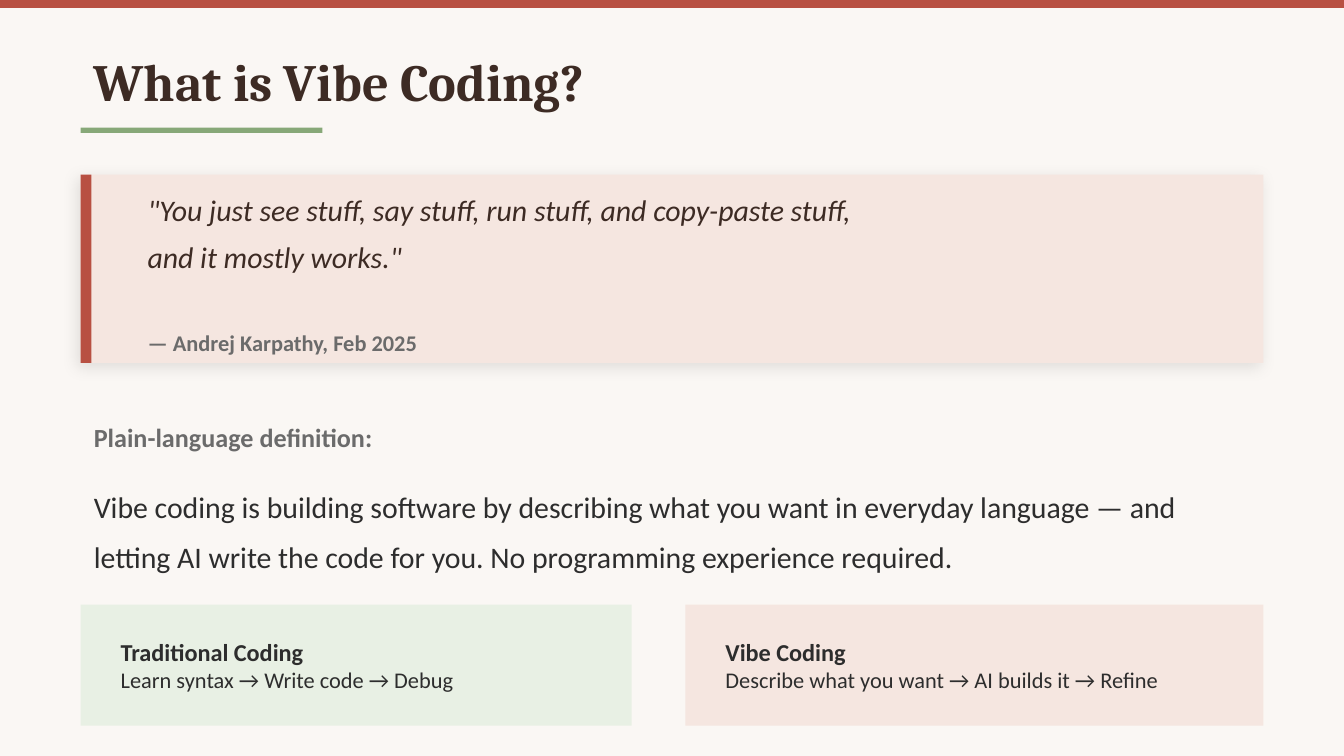
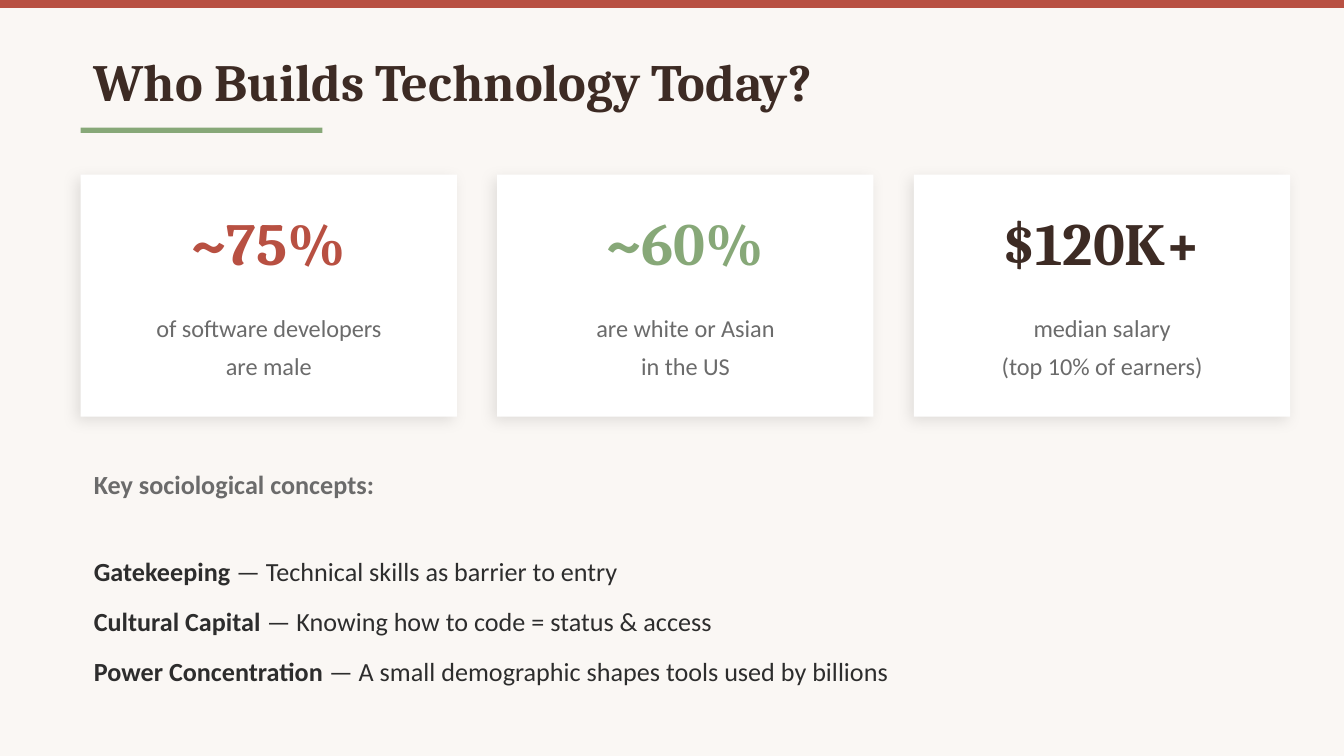
from dataclasses import dataclass

from lxml.etree import SubElement
from pptx import Presentation
from pptx.dml.color import RGBColor as RGB
from pptx.enum.shapes import MSO_SHAPE as Shape
from pptx.enum.text import MSO_ANCHOR as Anchor, PP_ALIGN as Align
from pptx.oxml.ns import qn
from pptx.slide import Slide
from pptx.util import Inches, Pt

CREAM = RGB(0xFA, 0xF7, 0xF4)
RUST = RGB(0xB8, 0x50, 0x42)
BROWN = RGB(0x3D, 0x2B, 0x24)
SAGE = RGB(0x87, 0xA8, 0x78)
BLUSH = RGB(0xF5, 0xE6, 0xE0)
MINT = RGB(0xE8, 0xF0, 0xE4)
WHITE = RGB(0xFF, 0xFF, 0xFF)
GRAY = RGB(0x6B, 0x6B, 0x6B)
INK = RGB(0x2D, 0x2D, 0x2D)

HEAD = "Cambria"
BODY = "Calibri"
LEFT = 0.6
WIDE = 8.8
TOP = 1.3


@dataclass(frozen=True)
class Box:
    left: float
    top: float
    width: float
    height: float

    def lengths(self) -> list[Inches]:
        return [Inches(n) for n in (self.left, self.top, self.width, self.height)]


@dataclass(frozen=True)
class Style:
    size: int
    color: RGB
    font: str = BODY
    bold: bool = False
    italic: bool = False
    align: Align = Align.LEFT
    spacing: float | None = None


@dataclass(frozen=True)
class Line:
    text: str
    style: Style
    lead: str = ""
    gap: int = 0


@dataclass(frozen=True)
class Panel:
    left: float
    width: float
    fill: RGB
    name: str
    steps: str


@dataclass(frozen=True)
class Stat:
    value: str
    color: RGB
    labels: tuple[str, str]


TITLE = Style(28, BROWN, HEAD, bold=True)
LABEL = Style(14, GRAY, bold=True)
QUOTE = Style(16, BROWN, italic=True, spacing=1.3)
SOURCE = Style(12, GRAY, bold=True, spacing=1.3)
PROSE = Style(16, INK, spacing=1.4)
NAME = Style(13, INK, bold=True)
STEPS = Style(12, INK)
NOTE = Style(13, GRAY, align=Align.CENTER, spacing=1.3)
TERM = Style(14, INK, spacing=1.6)

PANELS = (
    Panel(LEFT, 4.1, MINT, "Traditional Coding", "Learn syntax → Write code → Debug"),
    Panel(5.1, 4.3, BLUSH, "Vibe Coding", "Describe what you want → AI builds it → Refine"),
)
STATS = (
    Stat("~75%", RUST, ("of software developers", "are male")),
    Stat("~60%", SAGE, ("are white or Asian", "in the US")),
    Stat("$120K+", BROWN, ("median salary", "(top 10% of earners)")),
)
TERMS = (
    ("Gatekeeping", " — Technical skills as barrier to entry"),
    ("Cultural Capital", " — Knowing how to code = status & access"),
    ("Power Concentration", " — A small demographic shapes tools used by billions"),
)


def add_rect(slide: Slide, box: Box, fill: RGB, raised: bool = False) -> None:
    """Draw a plain block; a raised one casts a soft shadow."""
    rect = slide.shapes.add_shape(Shape.RECTANGLE, *box.lengths())
    rect.fill.solid()
    rect.fill.fore_color.rgb = fill
    rect.line.fill.background()
    rect.shadow.inherit = False
    if raised:
        effects = rect._element.spPr.find(qn("a:effectLst"))
        shade = SubElement(effects, qn("a:outerShdw"), blurRad=str(Pt(8)),
                           dist=str(Pt(3)), dir=str(135 * 60000),
                           algn="bl", rotWithShape="0")
        color = SubElement(shade, qn("a:srgbClr"), val="000000")
        SubElement(color, qn("a:alpha"), val="10000")


def add_text(slide: Slide, box: Box, *lines: Line) -> None:
    frame = slide.shapes.add_textbox(*box.lengths()).text_frame
    frame.word_wrap = True
    frame.vertical_anchor = Anchor.MIDDLE
    for i, line in enumerate(lines):
        para = frame.add_paragraph() if i else frame.paragraphs[0]
        style = line.style
        para.alignment = style.align
        if style.spacing:
            para.line_spacing = style.spacing
        if line.gap:
            para.space_before = Pt(line.gap)
        font = para.font
        font.name = style.font
        font.size = Pt(style.size)
        font.bold = style.bold
        font.italic = style.italic
        font.color.rgb = style.color
        if line.lead:
            lead = para.add_run()
            lead.text = line.lead
            lead.font.bold = True
        para.add_run().text = line.text


def add_page(deck: Presentation, title: str) -> Slide:
    """Add a slide with the shared background, top band and title."""
    slide = deck.slides.add_slide(deck.slide_layouts[6])
    back = slide.background.fill
    back.solid()
    back.fore_color.rgb = CREAM
    add_rect(slide, Box(0, 0, 10, 0.06), RUST)
    add_text(slide, Box(LEFT, 0.25, WIDE, 0.7), Line(title, TITLE))
    add_rect(slide, Box(LEFT, 0.95, 1.8, 0.04), SAGE)
    return slide


def add_panel(slide: Slide, panel: Panel) -> None:
    add_rect(slide, Box(panel.left, 4.5, panel.width, 0.9), panel.fill)
    add_text(slide, Box(panel.left + 0.2, 4.55, panel.width - 0.4, 0.8),
             Line(panel.name, NAME), Line(panel.steps, STEPS))


def add_stat(slide: Slide, left: float, stat: Stat) -> None:
    width = 2.8
    value = Style(32, stat.color, HEAD, bold=True, align=Align.CENTER)
    add_rect(slide, Box(left, TOP, width, 1.8), WHITE, raised=True)
    add_text(slide, Box(left, 1.4, width, 0.8), Line(stat.value, value))
    add_text(slide, Box(left, 2.15, width, 0.8),
             *(Line(label, NOTE) for label in stat.labels))


def add_meaning(deck: Presentation) -> None:
    slide = add_page(deck, "What is Vibe Coding?")
    add_rect(slide, Box(LEFT, TOP, WIDE, 1.4), BLUSH, raised=True)
    add_rect(slide, Box(LEFT, TOP, 0.08, 1.4), RUST)
    add_text(slide, Box(1, 1.4, 8, 1.2),
             Line('"You just see stuff, say stuff, run stuff, and copy-paste stuff,', QUOTE),
             Line('and it mostly works."', QUOTE),
             Line("— Andrej Karpathy, Feb 2025", SOURCE, gap=25))
    add_text(slide, Box(LEFT, 3, WIDE, 0.5), Line("Plain-language definition:", LABEL))
    add_text(slide, Box(LEFT, 3.4, WIDE, 1),
             Line("Vibe coding is building software by describing what you want in "
                  "everyday language — and letting AI write the code for you. "
                  "No programming experience required.", PROSE))
    for panel in PANELS:
        add_panel(slide, panel)


def add_makers(deck: Presentation) -> None:
    slide = add_page(deck, "Who Builds Technology Today?")
    for i, stat in enumerate(STATS):
        add_stat(slide, LEFT + i * 3.1, stat)
    add_text(slide, Box(LEFT, 3.4, WIDE, 0.4), Line("Key sociological concepts:", LABEL))
    add_text(slide, Box(LEFT, 3.8, WIDE, 1.5),
             *(Line(text, TERM, lead=lead) for lead, text in TERMS))


def main() -> None:
    deck = Presentation()
    deck.slide_width = Inches(10)
    deck.slide_height = deck.slide_width * 9 // 16
    add_meaning(deck)
    add_makers(deck)
    deck.save("out.pptx")


if __name__ == "__main__":
    main()
